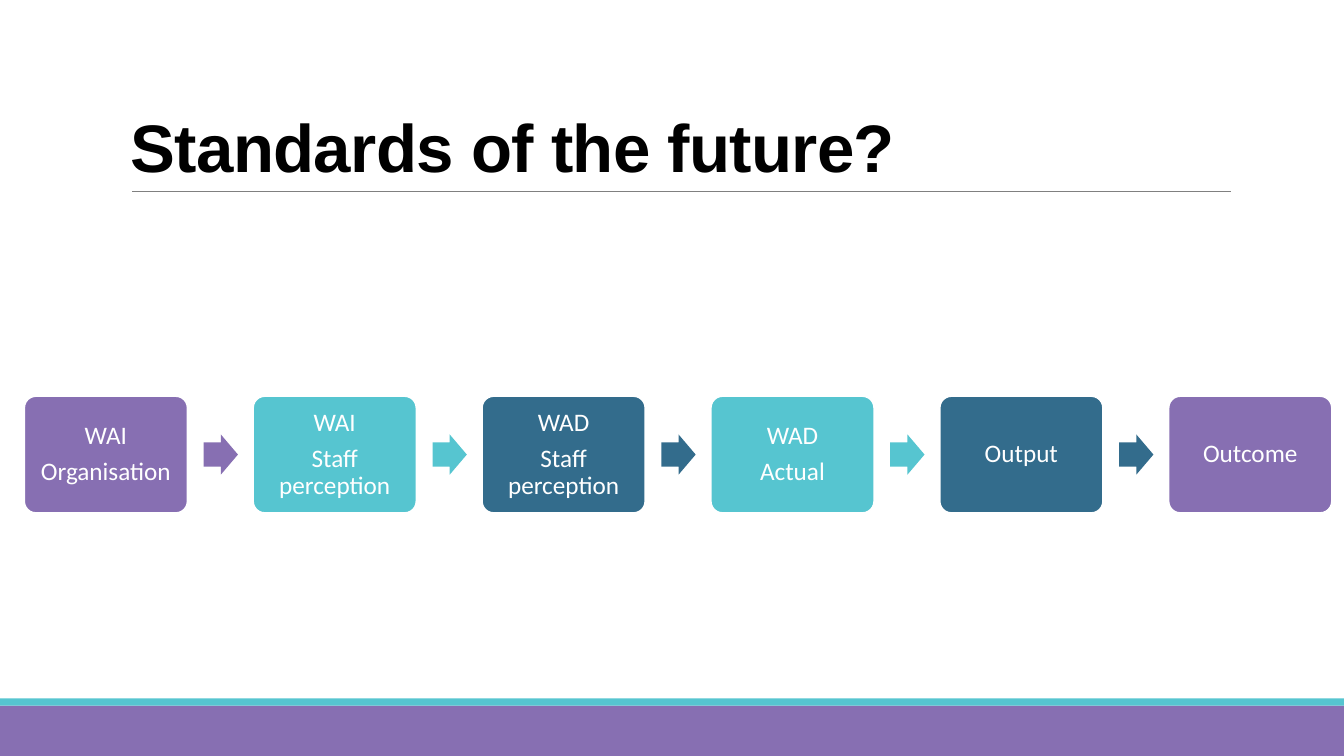
from pptx import Presentation
from pptx import util as u
from pptx.dml import color
from pptx.enum import shapes, text
from pptx.oxml import xmlchemy

PURPLE, TURQUOISE, BLUE, WHITE = "876FB2", "56C5D0", "336C8C", "FFFFFF"


def rgb(value):
    return color.RGBColor.from_string(value)


def add_filled(kind, left, top, width, height, fill):
    shape = slide.shapes.add_shape(
        kind, u.Inches(left), u.Inches(top), u.Inches(width), u.Inches(height)
    )
    shape.shadow.inherit = False
    shape.fill.solid()
    shape.fill.fore_color.rgb = rgb(fill)
    shape.line.fill.background()
    return shape


presentation = Presentation()
presentation.slide_width = u.Inches(13.33)
presentation.slide_height = u.Inches(7.5)
slide = presentation.slides.add_slide(presentation.slide_layouts[6])

add_filled(shapes.MSO_SHAPE.RECTANGLE, 0, 7, 13.33, 0.5, PURPLE)
add_filled(shapes.MSO_SHAPE.RECTANGLE, 0, 6.93, 13.33, 0.07, TURQUOISE)

rule = slide.shapes.add_connector(
    shapes.MSO_CONNECTOR.STRAIGHT,
    u.Inches(1.31), u.Inches(1.9), u.Inches(12.21), u.Inches(1.9),
)
rule.line.color.rgb = rgb("808080")
rule.line.width = u.Pt(0.5)
rule._element.spPr.append(xmlchemy.OxmlElement("a:effectLst"))

title = slide.shapes.add_textbox(u.Inches(1.2), u.Inches(0.31), u.Inches(11), u.Inches(1.59))
title.text_frame.word_wrap = True
title.text_frame.vertical_anchor = text.MSO_ANCHOR.BOTTOM
paragraph = title.text_frame.paragraphs[0]
paragraph.line_spacing = 0.85
run = paragraph.add_run()
run.text = "Standards of the future?"
run.font.name = "Arial"
run.font.size = u.Pt(48)
run.font.bold = True
run.font.color.rgb = rgb("000000")
run._r.get_or_add_rPr().set("spc", "-50")

steps = [
    (["WAI", "Organisation"], PURPLE),
    (["WAI", "Staff perception"], TURQUOISE),
    (["WAD", "Staff perception"], BLUE),
    (["WAD", "Actual"], TURQUOISE),
    (["Output"], BLUE),
    (["Outcome"], PURPLE),
]
first_left, pitch = 0.24, 2.27

for index, (lines, fill) in enumerate(steps):
    left = first_left + index * pitch
    box = add_filled(shapes.MSO_SHAPE.ROUNDED_RECTANGLE, left, 3.93, 1.62, 1.16, fill)
    box.adjustments[0] = 0.1
    box.line.color.rgb = rgb(WHITE)
    box.line.width = u.Pt(1.25)

    frame = box.text_frame
    frame.word_wrap = True
    frame.vertical_anchor = text.MSO_ANCHOR.MIDDLE
    frame.margin_left = frame.margin_right = u.Inches(0.07)
    frame.margin_top = frame.margin_bottom = u.Inches(0.07)
    frame.text = "\n".join(lines)
    for paragraph in frame.paragraphs:
        paragraph.alignment = text.PP_ALIGN.CENTER
        paragraph.line_spacing = 0.9
        paragraph.space_after = u.Pt(6.3)
        paragraph.font.name = "Calibri"
        paragraph.font.size = u.Pt(18)
        paragraph.font.color.rgb = rgb(WHITE)

    if index < len(steps) - 1:
        arrow = add_filled(shapes.MSO_SHAPE.RIGHT_ARROW, left + 1.78, 4.31, 0.34, 0.4, fill)
        arrow.adjustments[0] = 0.6
        arrow.adjustments[1] = 0.5

presentation.save("out.pptx")
